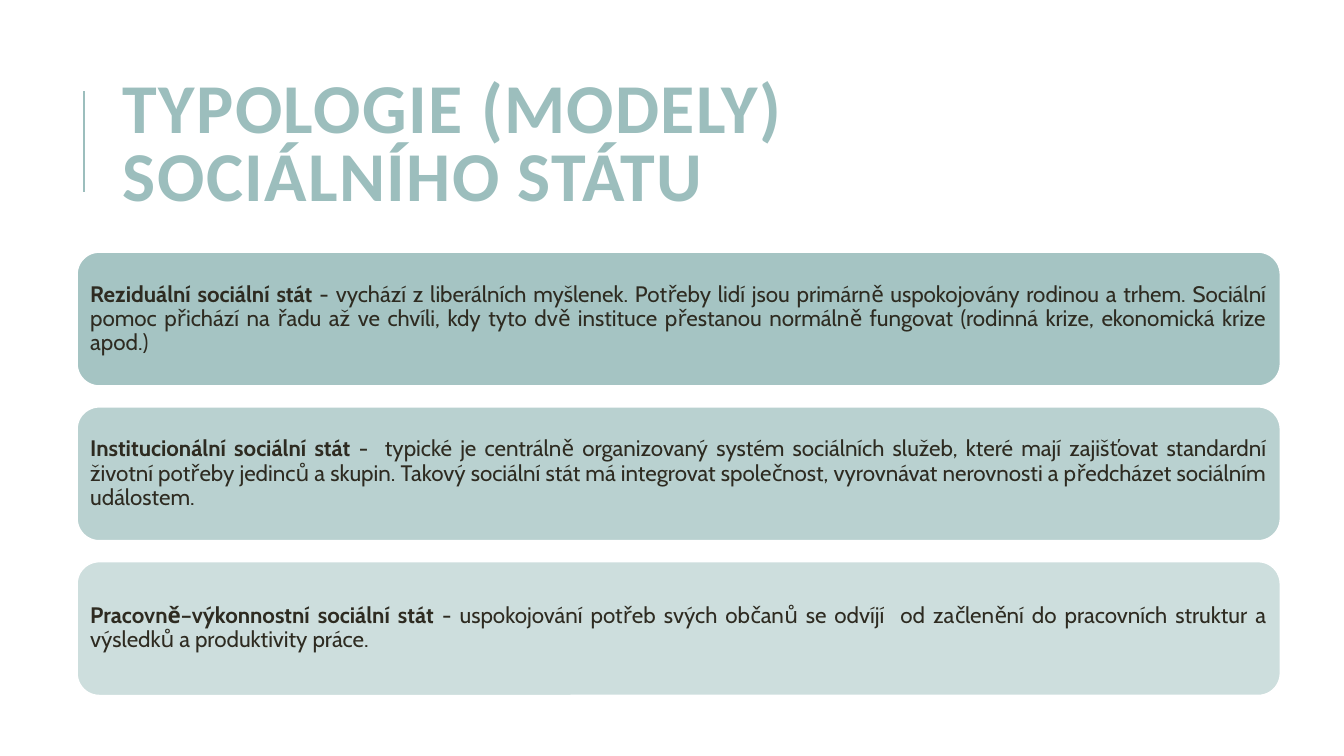
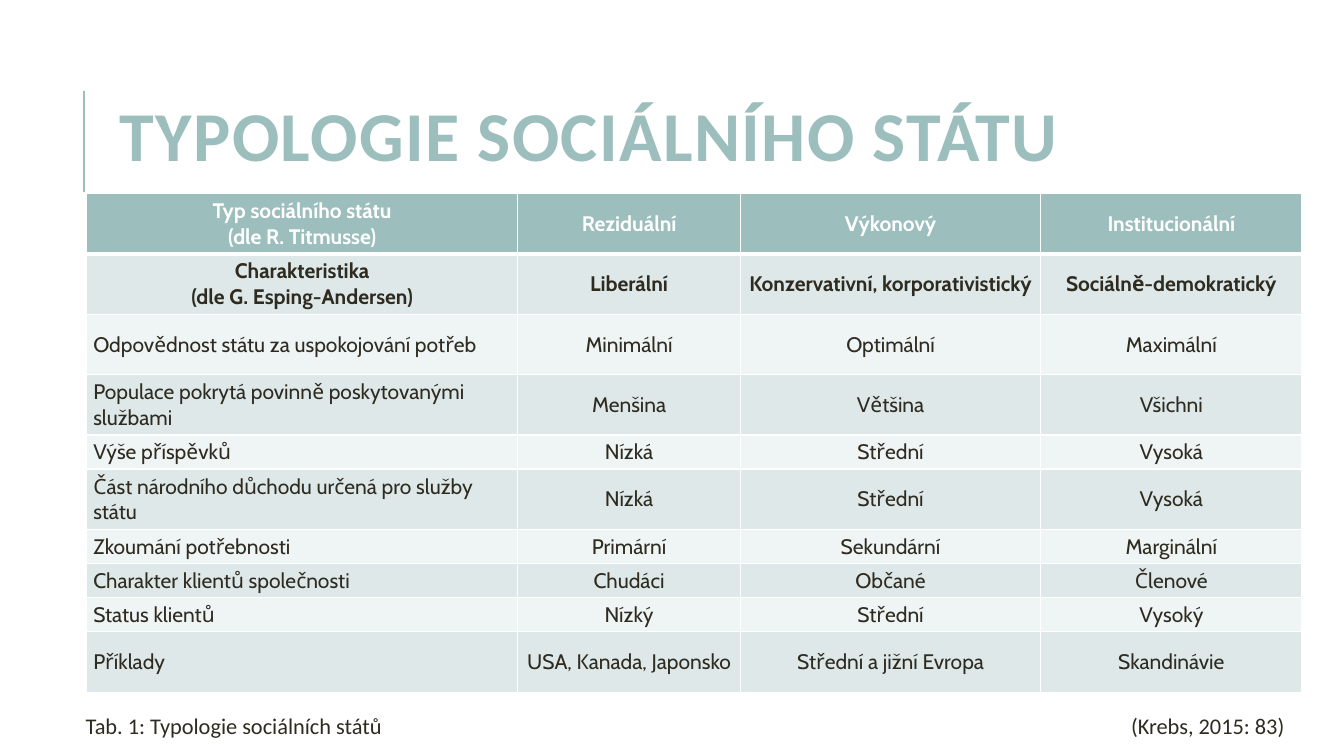
from lxml.etree import SubElement
from pptx import Presentation
from pptx.dml.color import RGBColor
from pptx.enum.shapes import MSO_CONNECTOR, MSO_SHAPE
from pptx.enum.text import MSO_ANCHOR, PP_ALIGN
from pptx.oxml.ns import qn
from pptx.util import Cm, Pt

TEAL = RGBColor(0x9C, 0xBE, 0xBD)
DARK = RGBColor(0x2E, 0x2B, 0x21)
WHITE = RGBColor(0xFF, 0xFF, 0xFF)
BAND = RGBColor(0xDE, 0xE8, 0xE8)
PALE = RGBColor(0xEF, 0xF4, 0xF4)
HEAD, BODY = "Calibri", "Cabin"


def write(par, text, size, face, color=DARK, bold=False):
    run = par.add_run()
    run.text = text
    font = run.font
    font.size, font.name, font.bold = Pt(size), face, bold
    font.color.rgb = color
    return run


def add_box(slide, left, top, width, height, anchor=MSO_ANCHOR.TOP):
    box = slide.shapes.add_textbox(Cm(left), Cm(top), Cm(width), Cm(height))
    frame = box.text_frame
    frame.word_wrap = True
    frame.vertical_anchor = anchor
    return frame.paragraphs[0]


deck = Presentation()
deck.slide_width, deck.slide_height = Cm(33.87), Cm(19.05)

titles = [
    ("TYPOLOGIE (MODELY) SOCIÁLNÍHO STÁTU", 2.85, 1.63, 26.9, 4.17),
    ("TYPOLOGIE SOCIÁLNÍHO STÁTU", 2.77, 3, 26.75, 1.12),
]
slides = []
for title, *place in titles:
    slide = deck.slides.add_slide(deck.slide_layouts[6])
    rule = slide.shapes.add_connector(
        MSO_CONNECTOR.STRAIGHT, Cm(2.12), Cm(4.83), Cm(2.12), Cm(2.29))
    rule.line.color.rgb = TEAL
    rule.line.width = Pt(1.5)
    SubElement(rule._element.spPr, qn("a:effectLst"))
    par = add_box(slide, *place, MSO_ANCHOR.MIDDLE)
    par.line_spacing = 0.8
    run = write(par, title, 50, HEAD, TEAL, True)
    run._r.get_or_add_rPr().set("spc", "100")
    slides.append(slide)
models, matrix = slides

cards = [
    ("Reziduální sociální stát ",
     "- vychází z liberálních myšlenek. Potřeby lidí jsou primárně "
     "uspokojovány rodinou a trhem. Sociální pomoc přichází na řadu až ve "
     "chvíli, kdy tyto dvě instituce přestanou normálně fungovat (rodinná "
     "krize, ekonomická krize apod.)"),
    ("Institucionální sociální stát ",
     "-  typické je centrálně organizovaný systém sociálních služeb, které "
     "mají zajišťovat standardní životní potřeby jedinců a skupin. Takový "
     "sociální stát má integrovat společnost, vyrovnávat nerovnosti a "
     "předcházet sociálním událostem."),
    ("Pracovně–výkonnostní sociální stát",
     " - uspokojování potřeb svých občanů se odvíjí  od začlenění do "
     "pracovních struktur a výsledků a produktivity práce."),
]
for i, (name, text) in enumerate(cards):
    card = models.shapes.add_shape(
        MSO_SHAPE.ROUNDED_RECTANGLE,
        Cm(1.94), Cm(6.35 + 3.9 * i), Cm(30.33), Cm(3.38))
    card.shadow.inherit = False
    card.fill.solid()
    card.fill.fore_color.rgb = TEAL
    tint = card._element.spPr.find(qn("a:solidFill"))[0]
    SubElement(tint, qn("a:alpha"), val=str(90000 - 20000 * i))
    card.line.color.rgb = WHITE
    card.line.width = Pt(1.25)
    frame = card.text_frame
    frame.word_wrap = True
    frame.vertical_anchor = MSO_ANCHOR.MIDDLE
    frame.margin_left = frame.margin_right = Cm(0.17)
    frame.margin_top = frame.margin_bottom = Cm(0.17)
    par = frame.paragraphs[0]
    par.alignment = PP_ALIGN.JUSTIFY
    par.line_spacing = 0.9
    write(par, name, 16, BODY, bold=True)
    write(par, text, 16, BODY)

rows = [
    ("Typ sociálního státu\n(dle R. Titmusse)",
     "Reziduální", "Výkonový", "Institucionální"),
    ("Charakteristika\n(dle G. Esping-Andersen)",
     "Liberální", "Konzervativní, korporativistický", "Sociálně-demokratický"),
    ("Odpovědnost státu za uspokojování potřeb",
     "Minimální", "Optimální", "Maximální"),
    ("Populace pokrytá povinně poskytovanými službami",
     "Menšina", "Většina", "Všichni"),
    ("Výše příspěvků", "Nízká", "Střední", "Vysoká"),
    ("Část národního důchodu určená pro služby státu",
     "Nízká", "Střední", "Vysoká"),
    ("Zkoumání potřebnosti", "Primární", "Sekundární", "Marginální"),
    ("Charakter klientů společnosti", "Chudáci", "Občané", "Členové"),
    ("Status klientů", "Nízký", "Střední", "Vysoký"),
    ("Příklady",
     "USA, Kanada, Japonsko", "Střední a jižní Evropa", "Skandinávie"),
]
widths = [10.87, 5.61, 7.57, 6.58]
short = {4, 6, 7, 8}
heights = [0.86 if r in short else 1.52 for r in range(len(rows))]
table = matrix.shapes.add_table(
    len(rows), len(widths), Cm(2.18), Cm(4.88),
    Cm(sum(widths)), Cm(sum(heights))).table
for col, width in zip(table.columns, widths):
    col.width = Cm(width)
for r, texts in enumerate(rows):
    table.rows[r].height = Cm(heights[r])
    for c, text in enumerate(texts):
        cell = table.cell(r, c)
        cell.vertical_anchor = MSO_ANCHOR.MIDDLE
        cell.margin_left = cell.margin_right = Cm(0.17)
        cell.margin_top = cell.margin_bottom = Cm(0.1)
        for side in "LRTB":
            thick = (r, side) in ((0, "B"), (1, "T"))
            edge = SubElement(cell._tc.get_or_add_tcPr(), qn("a:ln" + side),
                              w=str(Pt(3 if thick else 1)))
            paint = SubElement(edge, qn("a:solidFill"))
            SubElement(paint, qn("a:srgbClr"), val=str(WHITE))
        cell.fill.solid()
        cell.fill.fore_color.rgb = TEAL if r == 0 else BAND if r % 2 else PALE
        frame = cell.text_frame
        for n, line in enumerate(text.split("\n")):
            par = frame.add_paragraph() if n else frame.paragraphs[0]
            left = c == 0 and r > 1
            par.alignment = PP_ALIGN.LEFT if left else PP_ALIGN.CENTER
            write(par, line, 15, BODY, WHITE if r == 0 else DARK, r < 2)

notes = [
    ("(Krebs, 2015: 83)", 23.83, 8.79, PP_ALIGN.RIGHT),
    ("Tab. 1: Typologie sociálních států", 1.91, 9.8, PP_ALIGN.LEFT),
]
for text, left, width, align in notes:
    par = add_box(matrix, left, 17.81, width, 0.94)
    par.alignment = align
    write(par, text, 16, HEAD)

deck.save("out.pptx")
